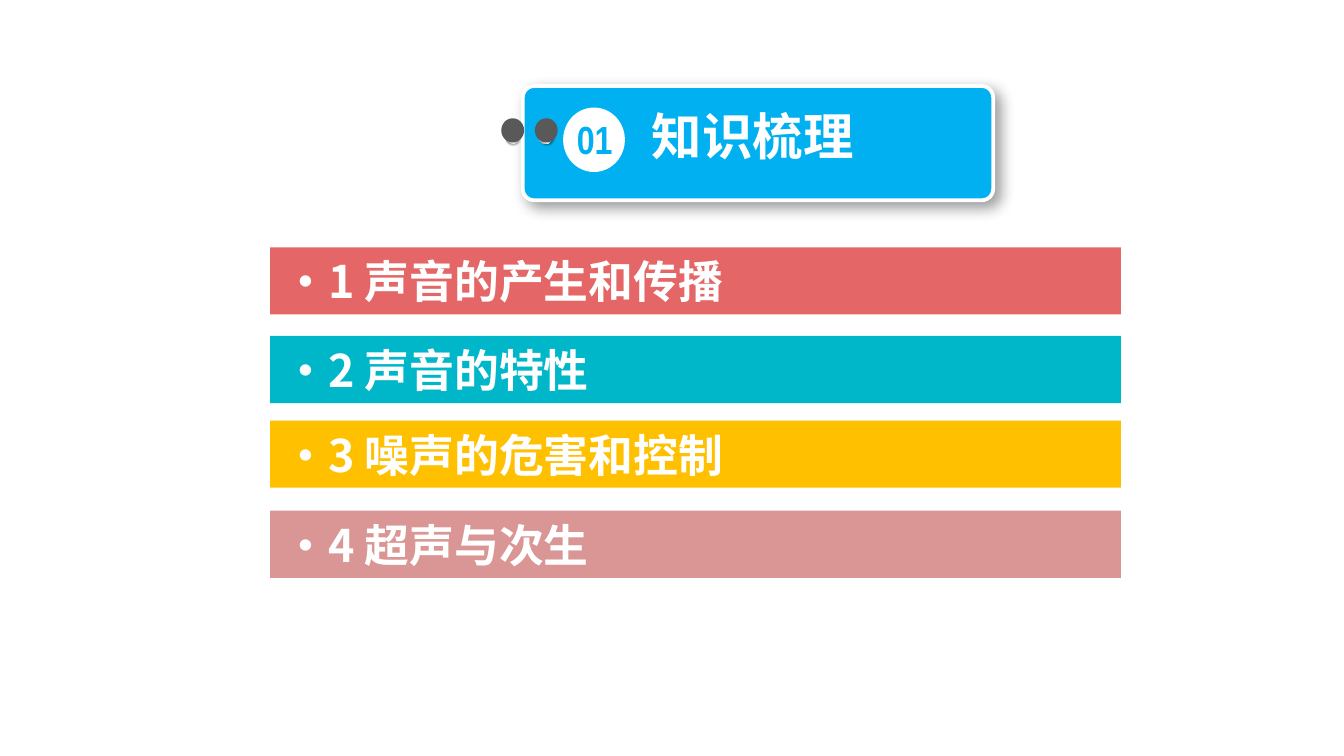
from lxml import etree
from pptx import Presentation
from pptx.dml.color import RGBColor
from pptx.enum.shapes import MSO_SHAPE
from pptx.enum.text import MSO_ANCHOR, PP_ALIGN
from pptx.oxml import parse_xml
from pptx.oxml.ns import nsdecls, qn
from pptx.util import Inches, Pt

RECT, ROUND, OVAL = MSO_SHAPE.RECTANGLE, MSO_SHAPE.ROUNDED_RECTANGLE, MSO_SHAPE.OVAL
LEFT, CENTER = PP_ALIGN.LEFT, PP_ALIGN.CENTER
MIDDLE = MSO_ANCHOR.MIDDLE
CJK = "Noto Sans CJK SC"
WHITE, BLUE, GREY = "FFFFFF", "00B0F0", "595959"

METAL = [(0, "FFFFFF"), (17, "A6A6A6"), (35, "F2F2F2"),
         (55, "A6A6A6"), (75, "F2F2F2"), (100, "A6A6A6")]

# Topic, bar colour, bar top
TOPICS = [
    ("·1 声音的产生和传播", "E56666", 1.84),
    ("·2 声音的特性", "00B7CA", 2.5),
    ("·3 噪声的危害和控制", "FFC000", 3.13),
    ("·4 超声与次生", "D99694", 3.8),
]


def color(value):
    return RGBColor.from_string(value)


def add_block(slide, kind, box, fill, line=None):
    block = slide.shapes.add_shape(kind, *map(Inches, box))
    block.shadow.inherit = False
    block.fill.solid()
    block.fill.fore_color.rgb = color(fill)
    if line:
        block.line.color.rgb = color(line)
        block.line.width = Pt(2)
    else:
        block.line.fill.background()
    return block


def add_shadow(block, blur, distance):
    effects = block._element.spPr.find(qn("a:effectLst"))
    effects.append(parse_xml(
        f'<a:outerShdw {nsdecls("a")} blurRad="{Pt(blur)}" dist="{Pt(distance)}" '
        'dir="2700000" algn="tl" rotWithShape="0"><a:srgbClr val="000000">'
        '<a:alpha val="40000"/></a:srgbClr></a:outerShdw>'))


def set_metal(block):
    block.fill.gradient()
    block.fill.gradient_angle = 315
    stops = block._element.spPr.find(qn("a:gradFill")).find(qn("a:gsLst"))
    for stop in list(stops):
        stops.remove(stop)
    for position, shade in METAL:
        stop = etree.SubElement(stops, qn("a:gs"), pos=str(position * 1000))
        etree.SubElement(stop, qn("a:srgbClr"), val=shade)


def write(holder, text, size, font=CJK, fill=WHITE, align=LEFT, margin=0.0):
    frame = holder.text_frame
    frame.word_wrap = True
    frame.vertical_anchor = MIDDLE
    frame.margin_left = frame.margin_right = Inches(margin)
    frame.margin_top = frame.margin_bottom = 0
    paragraph = frame.paragraphs[0]
    paragraph.alignment = align
    run = paragraph.add_run()
    run.text = text
    run.font.size = Pt(size)
    run.font.bold = True
    run.font.name = font
    run.font.color.rgb = color(fill)
    if font == CJK:
        east_asian = etree.SubElement(run.font._element, qn("a:ea"))
        east_asian.set("typeface", font)


def add_pin(slide, left):
    rim = add_block(slide, OVAL, (left + 0.03, 0.97, 0.1, 0.1), WHITE)
    rim.rotation = 270
    set_metal(rim)
    add_shadow(rim, 1, 1)
    add_block(slide, OVAL, (left, 0.88, 0.17, 0.18), GREY)


def add_heading(slide):
    card = add_block(slide, ROUND, (3.89, 0.64, 3.5, 0.85), BLUE, line=WHITE)
    card.adjustments[0] = 0.1
    add_shadow(card, 8, 4)
    for left in (3.98, 3.73):
        add_pin(slide, left)

    # Section number on its disc
    add_block(slide, OVAL, (4.19, 0.8, 0.46, 0.48), WHITE)
    number = slide.shapes.add_textbox(*map(Inches, (4.16, 0.81, 0.53, 0.45)))
    write(number, "01", 21, font="Arial Narrow", fill=BLUE, align=CENTER)

    # The title goes in front of the card
    title = slide.shapes.title
    title.left, title.top, title.width, title.height = map(
        Inches, (4.49, 0.73, 2.22, 0.56))
    write(title, "知识梳理", 27, align=CENTER)
    slide.shapes._spTree.append(title._element)


def add_topics(slide):
    for topic, fill, top in TOPICS:
        bar = add_block(slide, RECT, (2.01, top, 6.33, 0.5), fill)
        write(bar, topic, 24, margin=0.1)


def main():
    deck = Presentation()
    # Widescreen page, 16:9
    deck.slide_width = Inches(10)
    deck.slide_height = deck.slide_width * 9 // 16
    slide = deck.slides.add_slide(deck.slide_layouts[5])
    add_heading(slide)
    add_topics(slide)
    deck.save("out.pptx")


if __name__ == "__main__":
    main()
